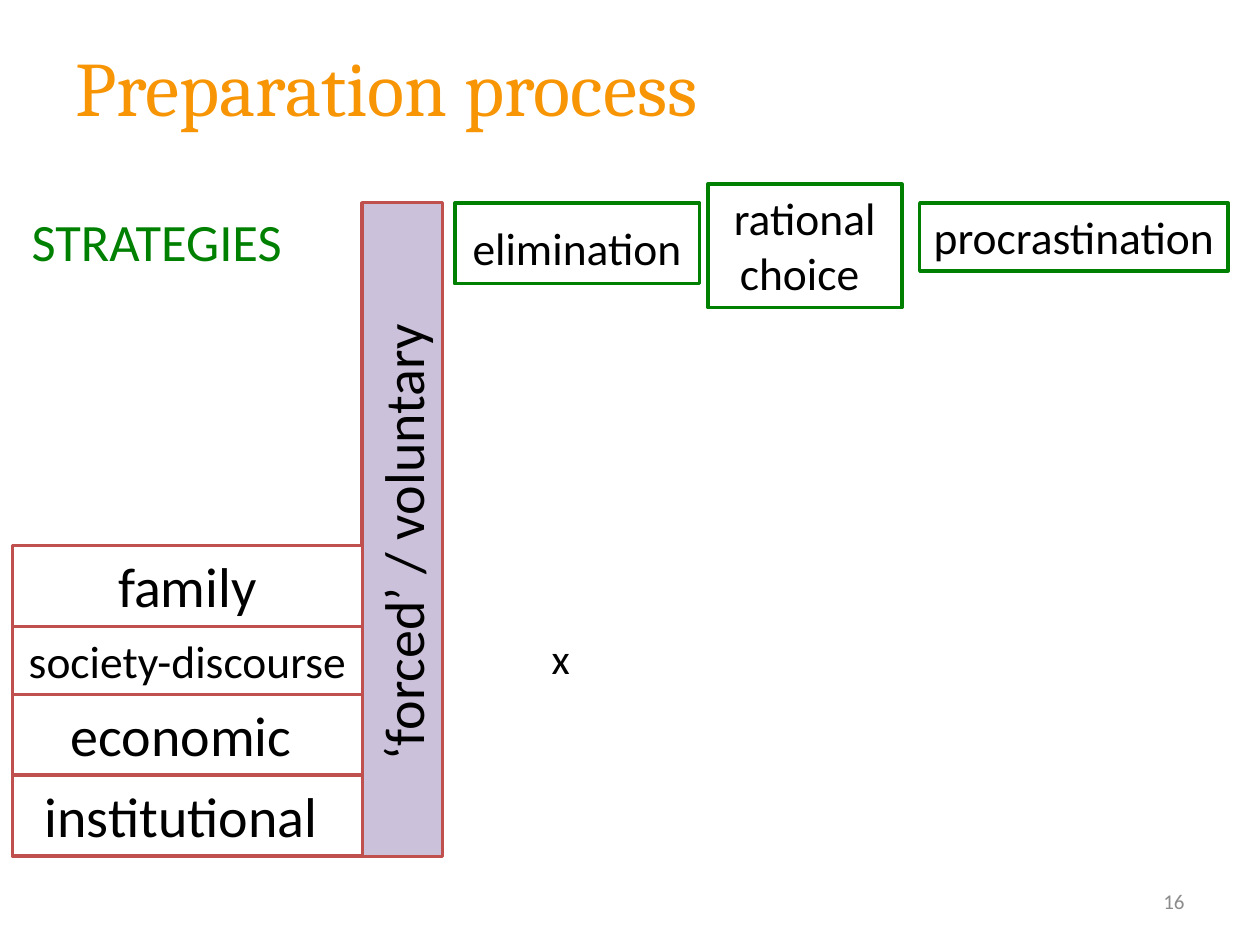
from dataclasses import dataclass

from pptx import Presentation
from pptx.dml.color import RGBColor as RGB
from pptx.enum.shapes import MSO_SHAPE as Preset
from pptx.enum.text import MSO_ANCHOR as Anchor, MSO_AUTO_SIZE as AutoSize, PP_ALIGN as Align
from pptx.util import Cm, Pt


@dataclass(frozen=True)
class Theme:
    heading_font: str = "Cambria"
    body_font: str = "Calibri"
    orange: RGB = RGB(0xF7, 0x95, 0x05)
    gray: RGB = RGB(0x8C, 0x8C, 0x8C)
    lilac: RGB = RGB(0xCC, 0xC1, 0xDA)
    red: RGB = RGB(0xC0, 0x50, 0x4D)
    green: RGB = RGB(0x00, 0x80, 0x00)
    black: RGB = RGB(0, 0, 0)
    white: RGB = RGB(0xFF, 0xFF, 0xFF)
    title_size: Pt = Pt(44)
    large: Pt = Pt(32)
    label: Pt = Pt(30)
    medium: Pt = Pt(26)
    mark: Pt = Pt(24)
    small: Pt = Pt(12)
    border: Pt = Pt(2)


theme = Theme()

deck = Presentation()
deck.slide_width, deck.slide_height = Cm(25.4), Cm(19.05)
slide = deck.slides.add_slide(deck.slide_layouts[6])


def write(holder, text, size, color, font=theme.body_font, align=Align.LEFT, anchor=Anchor.TOP):
    frame = holder.text_frame
    frame.word_wrap = True
    frame.vertical_anchor = anchor
    paragraph = frame.paragraphs[0]
    paragraph.text = text
    paragraph.alignment = align
    paragraph.font.name = font
    paragraph.font.size = size
    paragraph.font.color.rgb = color
    return frame


def add_box(bounds, text, size, border=None, fill=theme.white, color=theme.black):
    """Add a filled rectangle with centred text; without a border colour it has no outline."""
    box = slide.shapes.add_shape(Preset.RECTANGLE, *map(Cm, bounds))
    box.shadow.inherit = False
    box.fill.solid()
    box.fill.fore_color.rgb = fill
    if border is None:
        box.line.fill.background()
    else:
        box.line.color.rgb = border
        box.line.width = theme.border
    frame = write(box, text, size, color, align=Align.CENTER)
    frame.auto_size = AutoSize.SHAPE_TO_FIT_TEXT
    return box


# Title and page number
title = slide.shapes.add_textbox(Cm(1.27), Cm(0.13), Cm(24.13), Cm(3.18))
write(title, "Preparation process", theme.title_size, theme.orange,
      font=theme.heading_font, anchor=Anchor.MIDDLE)

page_number = slide.shapes.add_textbox(Cm(18.21), Cm(17.65), Cm(5.92), Cm(1.02))
write(page_number, "16", theme.small, theme.gray, align=Align.RIGHT, anchor=Anchor.MIDDLE)

# Vertical bar between the factors and the strategies
motive = add_box((1.52, 9.86, 13.18, 1.63), "‘forced’ / voluntary  ", theme.large,
                 border=theme.red, fill=theme.lilac)
motive.rotation = 270

# Factors, stacked without gaps
factor_top = 11.0
for factor, size, height in [
    ("family", theme.large, 1.63),
    ("society-discourse", theme.medium, 1.37),
    ("economic ", theme.large, 1.63),
    ("institutional ", theme.large, 1.63),
]:
    add_box((0.25, factor_top, 7.06, height), factor, size, border=theme.red)
    factor_top += height

# Strategies
strategy_top = 4.09
elimination = add_box((9.17, strategy_top, 4.93, 1.63), "elimination", theme.medium,
                      border=theme.green)
wide_space = elimination.text_frame.paragraphs[0].add_run()
wide_space.text = " "
wide_space.font.size = theme.large

add_box((14.27, 3.71, 3.91, 2.49), "rational choice ", theme.medium, border=theme.green)
add_box((18.54, strategy_top, 6.22, 1.37), "procrastination ", theme.medium, border=theme.green)
add_box((0, strategy_top, 6.32, 1.55), "STRATEGIES", theme.label, color=theme.green)

# Mark where society-discourse meets elimination
cross = slide.shapes.add_textbox(Cm(10.87), Cm(12.62), Cm(0.89), Cm(1.27))
cross_frame = write(cross, "x", theme.mark, theme.black)
cross_frame.word_wrap = False
cross_frame.auto_size = AutoSize.SHAPE_TO_FIT_TEXT

deck.save("out.pptx")
